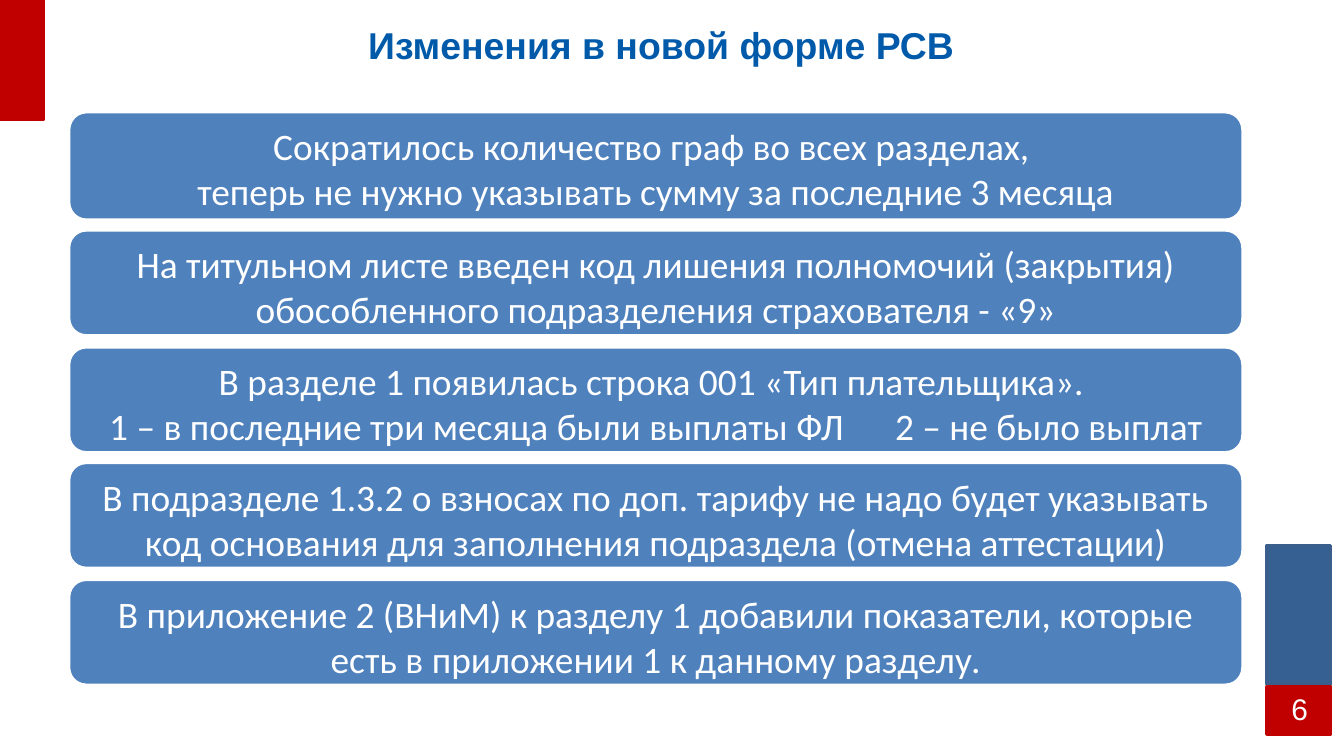
"""Build the slide listing the changes in the new RSV form."""
from pptx import Presentation
from pptx.dml.color import RGBColor
from pptx.enum.shapes import MSO_SHAPE
from pptx.enum.text import MSO_ANCHOR, PP_ALIGN
from pptx.util import Inches, Pt

COLORS = {"red": "C00000", "navy": "376092", "navy_line": "3A5F8C",
          "blue": "4F81BD", "title": "005AA9", "white": "FFFFFF"}


def add_box(kind, x, y, w, h, fill, line):
    sp = s.shapes.add_shape(kind, Inches(x), Inches(y), Inches(w), Inches(h))
    sp.shadow.inherit = False
    sp.fill.solid()
    sp.fill.fore_color.rgb = RGBColor.from_string(COLORS[fill])
    sp.line.color.rgb = RGBColor.from_string(COLORS[line])
    sp.line.width = Pt(2)
    return sp


def add_run(p, text, font, size, color, bold=False):
    p.alignment = PP_ALIGN.CENTER
    r = p.add_run()
    r.text = text
    r.font.name = font
    r.font.size = Pt(size)
    r.font.bold = bold
    r.font.color.rgb = RGBColor.from_string(COLORS[color])
    return r


prs = Presentation()
prs.slide_width = Inches(10)
prs.slide_height = Inches(10) * 9 // 16
s = prs.slides.add_slide(prs.slide_layouts[6])

for x, y, w, h, fill, line in [
    (9.43, 4.06, 0.47, 1.03, "navy", "navy_line"),
    (9.43, 5.11, 0.47, 0.35, "red", "red"),
    (0, 0, 0.32, 0.89, "red", "red"),
]:
    add_box(MSO_SHAPE.RECTANGLE, x, y, w, h, fill, line)

for x, y, w, h, inset, text, size, color, bold in [
    (9.41, 5.12, 0.52, 0.3, 0, "6", 16, "white", False),
    (1.06, 0, 7.72, 0.66, 0.1, "Изменения в новой форме РСВ", 20, "title", True),
]:
    tf = s.shapes.add_textbox(Inches(x), Inches(y), Inches(w), Inches(h)).text_frame
    tf.word_wrap = True
    tf.vertical_anchor = MSO_ANCHOR.MIDDLE
    tf.margin_left = tf.margin_right = Inches(inset)
    add_run(tf.paragraphs[0], text, "Arial", size, color, bold)

changes = [
    (0.83, 0.81, [["Сократилось количество граф во всех разделах, "],
                  ["теперь не нужно указывать сумму за последние 3 месяца"]]),
    (1.71, 0.79, [["На титульном листе введен код лишения полномочий (закрытия) "
                   "обособленного подразделения страхователя - «9»"]]),
    (2.58, 0.79, [["В разделе 1 появилась строка 001 «Тип плательщика». "],
                  ["1 – в последние три месяца были выплаты ФЛ", " ",
                   "2 – не было выплат"]]),
    (3.44, 0.79, [["В подразделе 1.3.2 о взносах по доп. тарифу не надо будет указывать "
                   "код основания для заполнения подраздела (отмена аттестации)"]]),
    (4.31, 0.79, [["В приложение 2 (ВНиМ) к разделу 1 добавили показатели, которые "
                   "есть в приложении 1 к данному разделу."]]),
]
for y, h, paragraphs in changes:
    sp = add_box(MSO_SHAPE.ROUNDED_RECTANGLE, 0.51, y, 8.74, h, "blue", "white")
    tf = sp.text_frame
    tf.word_wrap = True
    tf.vertical_anchor = MSO_ANCHOR.TOP
    for j, runs in enumerate(paragraphs):
        p = tf.add_paragraph() if j else tf.paragraphs[0]
        for text in runs:
            r = add_run(p, text, "Calibri", 20, "white")
            if text == " ":
                r._r.get_or_add_rPr().set("spc", "2260")

prs.save("out.pptx")
